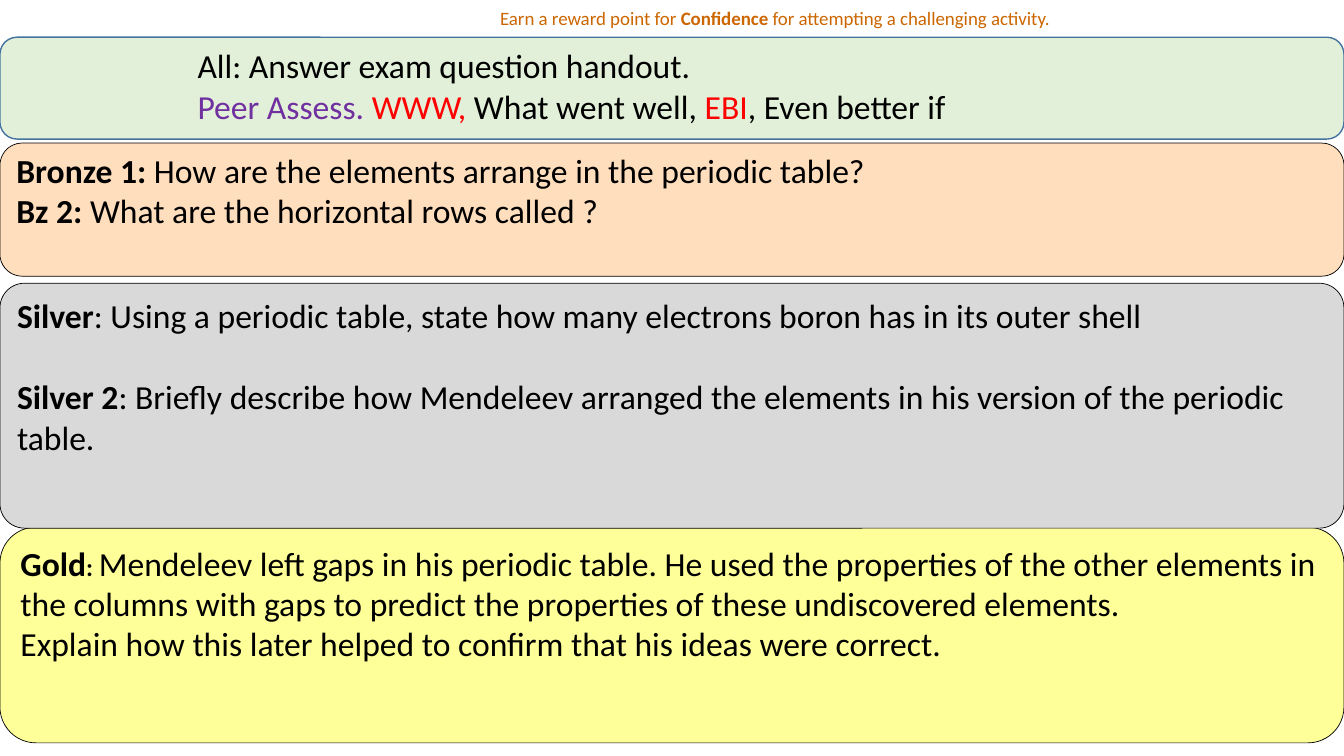
import pptx
import pptx.util
import pptx.dml.color
import pptx.enum.shapes
import pptx.enum.text
import pptx.oxml.ns
import lxml.etree
from dataclasses import dataclass


@dataclass(frozen=True)
class Theme:
    font: str = "Calibri"
    text: str = "000000"
    white: str = "FFFFFF"
    reward: str = "CC6600"
    peer: str = "7030A0"
    feedback: str = "FF0000"
    task: str = "E2F0D9"
    task_line: str = "43739E"
    bronze: str = "FFDEBD"
    silver: str = "D9D9D9"
    gold: str = "FFFF99"
    body_size: float = 24
    colon_size: float = 18
    reward_size: float = 13.5


def apply_format(target, values):
    for name, value in values.items():
        setattr(target, name, value)


def rgb(code):
    return pptx.dml.color.RGBColor.from_string(code)


class ActivitySlide:
    """Places elements by percentages of the slide's width and height."""

    def __init__(self, presentation, theme):
        self.presentation = presentation
        self.theme = theme
        self.slide = presentation.slides.add_slide(presentation.slide_layouts[1])

    def box(self, left, top, width, height):
        across = self.presentation.slide_width / 100
        down = self.presentation.slide_height / 100
        return {"left": int(left * across), "top": int(top * down),
                "width": int(width * across), "height": int(height * down)}

    def fill_text(self, shape, paragraphs, gap=0, **frame_format):
        """Each paragraph is a list of (text, format) runs."""
        frame = shape.text_frame
        apply_format(frame, {"word_wrap": True,
                             "auto_size": pptx.enum.text.MSO_AUTO_SIZE.NONE,
                             "vertical_anchor": pptx.enum.text.MSO_ANCHOR.TOP,
                             **frame_format})
        for index, runs in enumerate(paragraphs):
            paragraph = frame.add_paragraph() if index else frame.paragraphs[0]
            apply_format(paragraph, {"alignment": pptx.enum.text.PP_ALIGN.LEFT,
                                     "space_before": pptx.util.Pt(gap if index else 0)})
            for text, run_format in runs:
                self.add_run(paragraph, text, **run_format)

    def add_run(self, paragraph, text, size=None, color=None, bold=False):
        run = paragraph.add_run()
        run.text = text
        apply_format(run.font, {"name": self.theme.font, "bold": bold,
                                "size": pptx.util.Pt(size or self.theme.body_size)})
        run.font.color.rgb = rgb(color or self.theme.text)

    def panel(self, top, height, fill, line=None, line_width=0.5, corner=None):
        shape = self.slide.shapes.add_shape(
            pptx.enum.shapes.MSO_SHAPE.ROUNDED_RECTANGLE, **self.box(0, top, 100, height))
        shape.shadow.inherit = False
        shape.fill.solid()
        shape.fill.fore_color.rgb = rgb(fill)
        shape.line.color.rgb = rgb(line or self.theme.text)
        shape.line.width = pptx.util.Pt(line_width)
        if corner:
            shape.adjustments[0] = corner
        return shape

    def title(self, place, runs):
        title = self.slide.shapes.title
        apply_format(title, self.box(*place))
        title.fill.solid()
        title.fill.fore_color.rgb = rgb(self.theme.white)
        self.fill_text(title, [runs], vertical_anchor=pptx.enum.text.MSO_ANCHOR.MIDDLE)

    def body(self, place, paragraphs):
        body = self.slide.placeholders[1]
        apply_format(body, self.box(*place))
        self.fill_text(body, paragraphs)
        for paragraph in body.text_frame.paragraphs:
            properties = paragraph._p.get_or_add_pPr()
            properties.set("marL", "0")
            properties.set("indent", "0")
            lxml.etree.SubElement(properties, pptx.oxml.ns.qn("a:buNone"))
        # Bring the text in front of its panel
        self.slide.shapes._spTree.append(body._element)


def main():
    theme = Theme()
    presentation = pptx.Presentation()
    apply_format(presentation, {"slide_width": pptx.util.Inches(13.33),
                                "slide_height": pptx.util.Inches(7.5)})
    page = ActivitySlide(presentation, theme)
    plain, bold = {}, {"bold": True}

    # Reward line
    reward = {"size": theme.reward_size, "color": theme.reward}
    page.title((36.46, 0.13, 44.34, 4.4), [
        ("Earn a reward point for ", reward),
        ("Confidence", {**reward, **bold}),
        (" for attempting a challenging activity.", reward)])

    # Bronze questions
    bronze = page.panel(18.93, 17.6, theme.bronze)
    page.fill_text(bronze, [
        [("Bronze 1: ", bold),
         ("How are the elements arrange in the periodic table?", plain)],
        [("Bz 2: ", bold), ("What are the horizontal rows called ?", plain)]],
        margin_top=0)

    # Gold question
    gold = page.panel(69.73, 28.53, theme.gold)
    page.fill_text(gold, [
        [("Gold", bold), (": ", {"size": theme.colon_size, **bold}),
         ("Mendeleev left gaps in his periodic table. He used the properties of the "
          "other elements in the columns with gaps to predict the properties of these "
          "undiscovered elements.", plain)],
        [("Explain how this later helped to confirm that his ideas were correct.", plain)]])

    # Silver questions
    silver = page.panel(37.47, 32.4, theme.silver, corner=0.1)
    page.fill_text(silver, [
        [("Silver", bold),
         (": Using a periodic table, state how many electrons boron has in its outer shell",
          plain)],
        [("Silver 2", bold),
         (": Briefly describe how Mendeleev arranged the elements in his version of the "
          "periodic table.", plain)]], gap=29)

    # Task for everyone
    page.panel(4.93, 13.47, theme.task, line=theme.task_line, line_width=1)
    feedback = {"color": theme.feedback}
    page.body((13.95, 5.33, 69.09, 12.13), [
        [("All: Answer exam question handout.", plain)],
        [("Peer Assess. ", {"color": theme.peer}), ("WWW,", feedback),
         (" What went well, ", plain), ("EBI", feedback), (", Even better if", plain)]])

    presentation.save("out.pptx")


if __name__ == "__main__":
    main()
